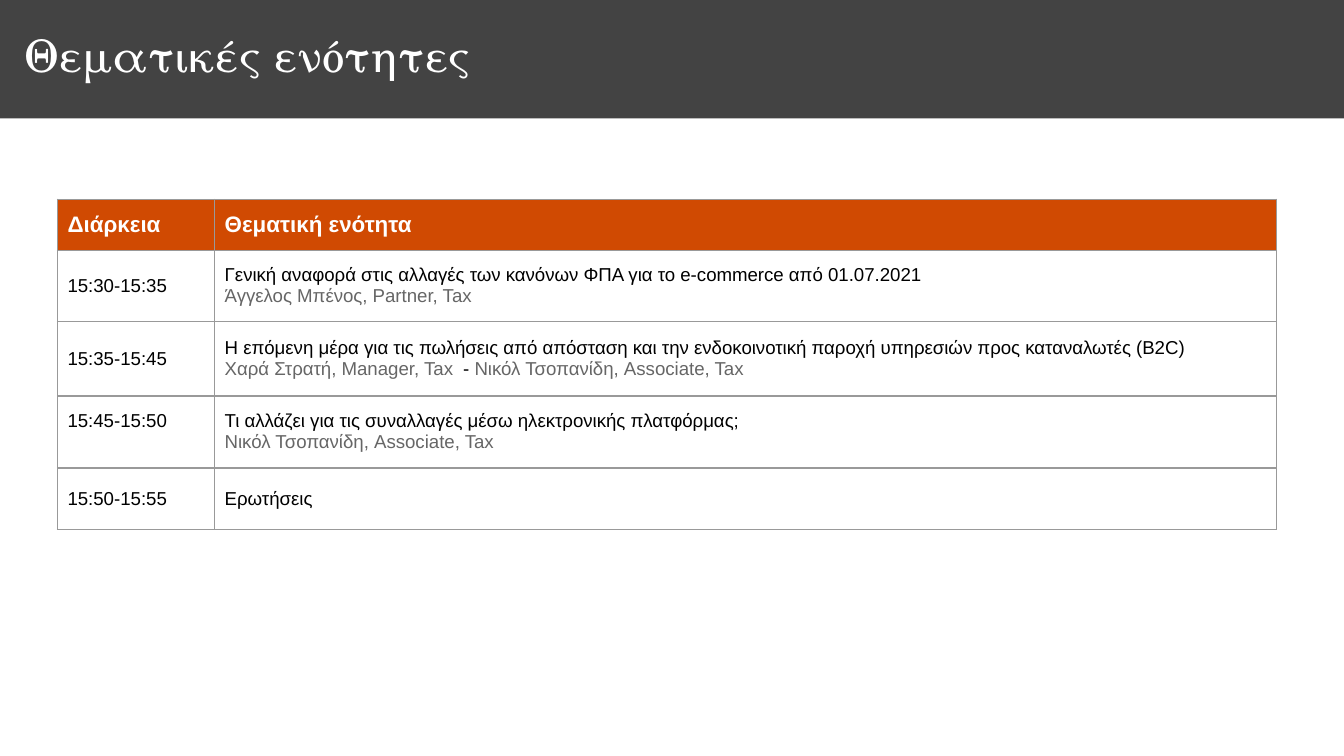
from lxml import etree
from pptx import Presentation
from pptx.dml.color import RGBColor
from pptx.enum.text import MSO_ANCHOR, MSO_AUTO_SIZE, PP_ALIGN
from pptx.oxml.ns import qn
from pptx.util import Pt

LEFT = PP_ALIGN.LEFT
TOP = MSO_ANCHOR.TOP
MIDDLE = MSO_ANCHOR.MIDDLE
NO_AUTOFIT = MSO_AUTO_SIZE.NONE
TITLE_ONLY = 5

BLACK, WHITE, GREY = "000000", "FFFFFF", "666666"
BAND, ORANGE, RULE = "434343", "D04A02", "999999"


def color(value):
    return RGBColor.from_string(value)


def add_run(paragraph, text, font="Arial", size=10, fill=BLACK, bold=False):
    run = paragraph.add_run()
    run.text = text
    run.font.name = font
    run.font.size = Pt(size)
    run.font.bold = bold
    run.font.color.rgb = color(fill)


presentation = Presentation()
presentation.slide_width = Pt(720)
presentation.slide_height = Pt(405)
slide = presentation.slides.add_slide(presentation.slide_layouts[TITLE_ONLY])

title = slide.shapes.title
title.left, title.top, title.width, title.height = Pt(0), Pt(0), Pt(720), Pt(63.5)
title.fill.solid()
title.fill.fore_color.rgb = color(BAND)
frame = title.text_frame
frame.auto_size = NO_AUTOFIT
frame.word_wrap = True
frame.vertical_anchor = MIDDLE
frame.margin_left = Pt(13)
frame.margin_right = frame.margin_top = frame.margin_bottom = Pt(0)
paragraph = frame.paragraphs[0]
paragraph.alignment = LEFT
paragraph.line_spacing = 0.85
add_run(paragraph, "Θεματικές ενότητες", font="TeX Gyre Schola", size=24, fill=WHITE)

agenda = [
    ("Διάρκεια", "Θεματική ενότητα", []),
    ("15:30-15:35",
     "Γενική αναφορά στις αλλαγές των κανόνων ΦΠΑ για το e-commerce από 01.07.2021",
     [("Άγγελος Μπένος, Partner, Tax", GREY)]),
    ("15:35-15:45",
     "Η επόμενη μέρα για τις πωλήσεις από απόσταση και την ενδοκοινοτική παροχή "
     "υπηρεσιών προς καταναλωτές (B2C)",
     [("Χαρά Στρατή, Manager, Tax ", GREY), (" - ", BLACK),
      ("Νικόλ Τσοπανίδη, Associate, Tax", GREY)]),
    ("15:45-15:50",
     "Τι αλλάζει για τις συναλλαγές μέσω ηλεκτρονικής πλατφόρμας;",
     [("Νικόλ Τσοπανίδη, Associate, Tax", GREY)]),
    ("15:50-15:55", "Ερωτήσεις", []),
]
column_widths = [84.2, 569]
row_heights = [27.5, 38, 40, 38.5, 33]

table = slide.shapes.add_table(
    len(agenda), 2, Pt(30.8), Pt(106.7), Pt(sum(column_widths)), Pt(sum(row_heights))
).table
for column, width in zip(table.columns, column_widths):
    column.width = Pt(width)
for row, height in zip(table.rows, row_heights):
    row.height = Pt(height)

for row_index, (time, topic, speakers) in enumerate(agenda):
    header = row_index == 0
    text_format = {"size": 12, "fill": WHITE, "bold": True} if header else {}
    for column_index, text in enumerate((time, topic)):
        cell = table.cell(row_index, column_index)
        cell.vertical_anchor = MIDDLE
        cell.margin_left = cell.margin_right = Pt(5.4)
        cell.margin_top = cell.margin_bottom = Pt(2.2 if header else 7.7)
        cell.fill.solid()
        cell.fill.fore_color.rgb = color(ORANGE if header else WHITE)
        add_run(cell.text_frame.paragraphs[0], text, **text_format)

        properties = cell._tc.get_or_add_tcPr()
        for position, side in enumerate(("a:lnL", "a:lnR", "a:lnT", "a:lnB")):
            border = etree.Element(qn(side), w=str(Pt(0.75)))
            fill = etree.SubElement(border, qn("a:solidFill"))
            etree.SubElement(fill, qn("a:srgbClr"), val=RULE)
            properties.insert(position, border)

    if speakers:
        paragraph = table.cell(row_index, 1).text_frame.add_paragraph()
        for text, fill in speakers:
            add_run(paragraph, text, fill=fill)

table.cell(3, 0).vertical_anchor = TOP

presentation.save("out.pptx")
